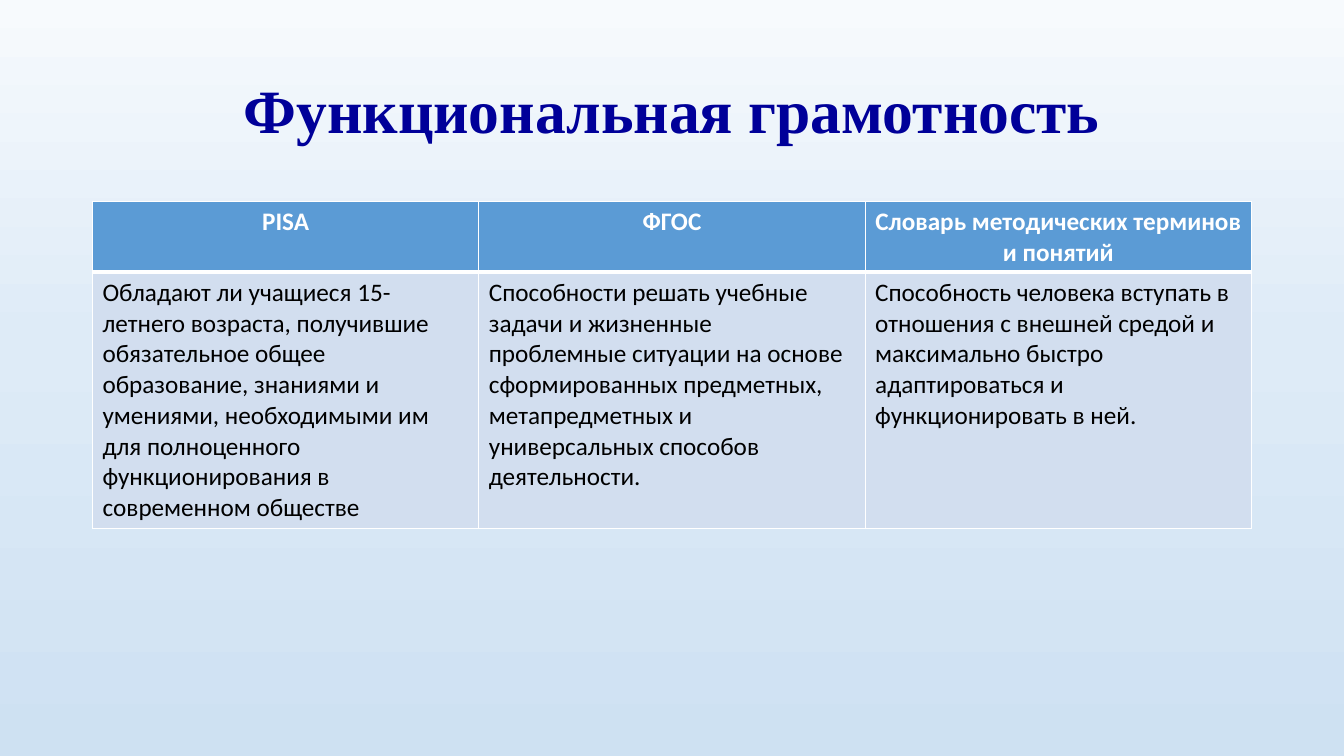
from copy import deepcopy

from lxml import etree
from pptx import Presentation
from pptx.dml.color import RGBColor
from pptx.enum.text import MSO_ANCHOR, PP_ALIGN
from pptx.oxml.ns import qn
from pptx.util import Cm, Pt

CENTER, LEFT = PP_ALIGN.CENTER, PP_ALIGN.LEFT
MIDDLE = MSO_ANCHOR.MIDDLE

BACKGROUND = [(0, "F7FAFD"), (0.45, "DEEBF7"), (1, "CEE1F2")]
TABLE = {
    "PISA": "Обладают ли учащиеся 15-летнего возраста, получившие обязательное "
            "общее образование, знаниями и умениями, необходимыми им для "
            "полноценного функционирования в современном обществе",
    "ФГОС": "Способности решать учебные задачи и жизненные проблемные ситуации "
            "на основе сформированных предметных, метапредметных и "
            "универсальных способов деятельности.",
    "Словарь методических терминов и понятий":
            "Способность человека вступать в отношения с внешней средой и "
            "максимально быстро адаптироваться и функционировать в ней.",
}


def rgb(value):
    return RGBColor.from_string(value)


class SlideBuilder:
    title_font, body_font = "Times New Roman", "Calibri"
    navy, white, black = "000099", "FFFFFF", "000000"
    header_fill, body_fill = "5B9BD5", "D2DEEF"

    def __init__(self, slide):
        self.s = slide

    def background(self, stops):
        fill = self.s.background.fill
        fill.gradient()
        fill.gradient_angle = 270
        gs_list = next(self.s.element.iter(qn("a:gsLst")))
        while len(gs_list) < len(stops):
            gs_list.append(deepcopy(gs_list[0]))
        for stop, (position, color) in zip(fill.gradient_stops, stops):
            stop.position = position
            stop.color.rgb = rgb(color)

    def styled_text(self, tf, text, font, size, color, bold, align):
        tf.text = text
        p = tf.paragraphs[0]
        p.alignment = align
        f = p.runs[0].font
        f.name, f.size, f.bold = font, Pt(size), bold
        f.color.rgb = rgb(color)

    def title(self, text, x, y, w, h):
        tf = self.s.shapes.add_textbox(Cm(x), Cm(y), Cm(w), Cm(h)).text_frame
        tf.word_wrap = True
        tf.vertical_anchor = MIDDLE
        self.styled_text(tf, text, self.title_font, 44, self.navy, True, CENTER)
        tf.paragraphs[0].line_spacing = 0.9

    def borders(self, cell, bottom):
        """Draw white cell edges, 1 pt wide except for the bottom one."""
        tc_pr = cell._tc.get_or_add_tcPr()
        for i, (side, width) in enumerate(zip("LRTB", (1, 1, 1, bottom))):
            ln = etree.Element(qn(f"a:ln{side}"), w=str(Pt(width)))
            solid = etree.SubElement(ln, qn("a:solidFill"))
            etree.SubElement(solid, qn("a:srgbClr"), val=self.white)
            tc_pr.insert(i, ln)

    def cell(self, cell, text, is_header):
        color = self.white if is_header else self.black
        self.styled_text(cell.text_frame, text, self.body_font, 18, color,
                         is_header, CENTER if is_header else LEFT)
        cell.fill.solid()
        cell.fill.fore_color.rgb = rgb(
            self.header_fill if is_header else self.body_fill)
        self.borders(cell, 3 if is_header else 1)

    def table(self, columns, x, y, w, heights):
        table = self.s.shapes.add_table(
            len(heights), len(columns),
            Cm(x), Cm(y), Cm(w), Cm(sum(heights))).table
        for row, height in zip(table.rows, heights):
            row.height = Cm(height)
        for col, texts in enumerate(columns.items()):
            for row, text in enumerate(texts):
                self.cell(table.cell(row, col), text, row == 0)


def main():
    prs = Presentation()
    prs.slide_width, prs.slide_height = Cm(33.87), Cm(19.05)
    slide = SlideBuilder(prs.slides.add_slide(prs.slide_layouts[6]))
    slide.background(BACKGROUND)
    slide.title("Функциональная грамотность", 2.33, 1.01, 29.21, 3.68)
    slide.table(TABLE, 2.33, 5.08, 29.21, [1.78, 6.45])
    prs.save("out.pptx")


if __name__ == "__main__":
    main()
